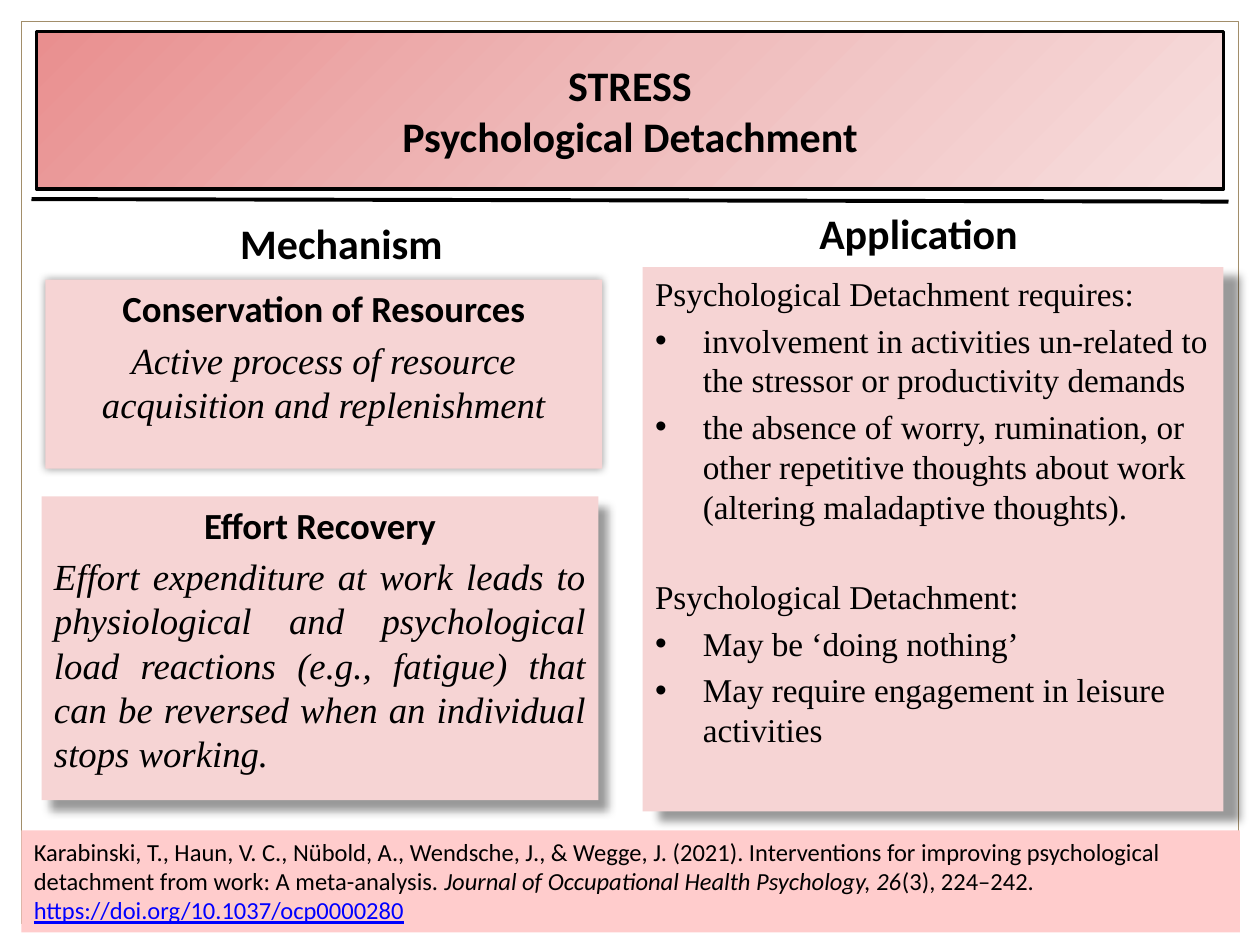
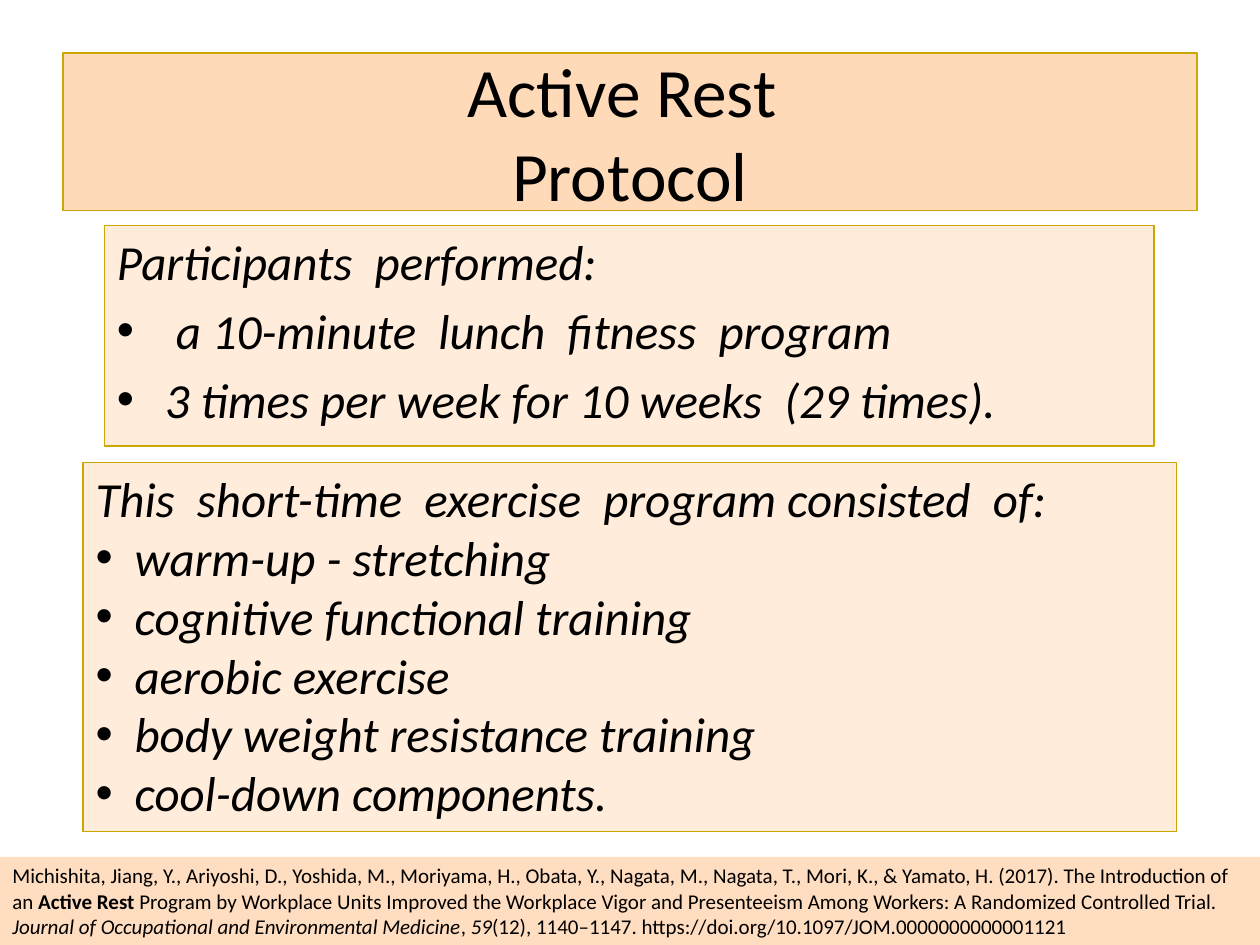
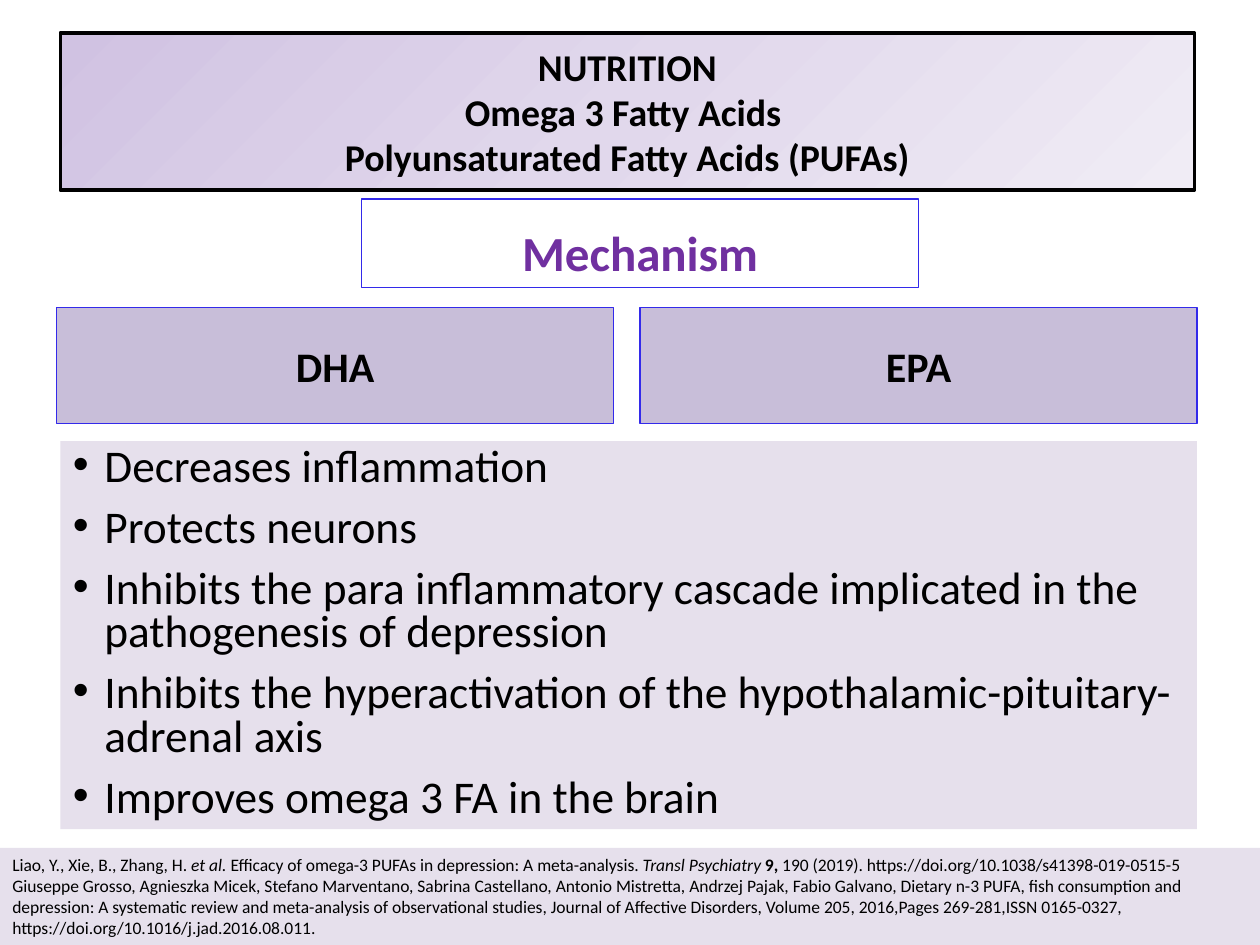
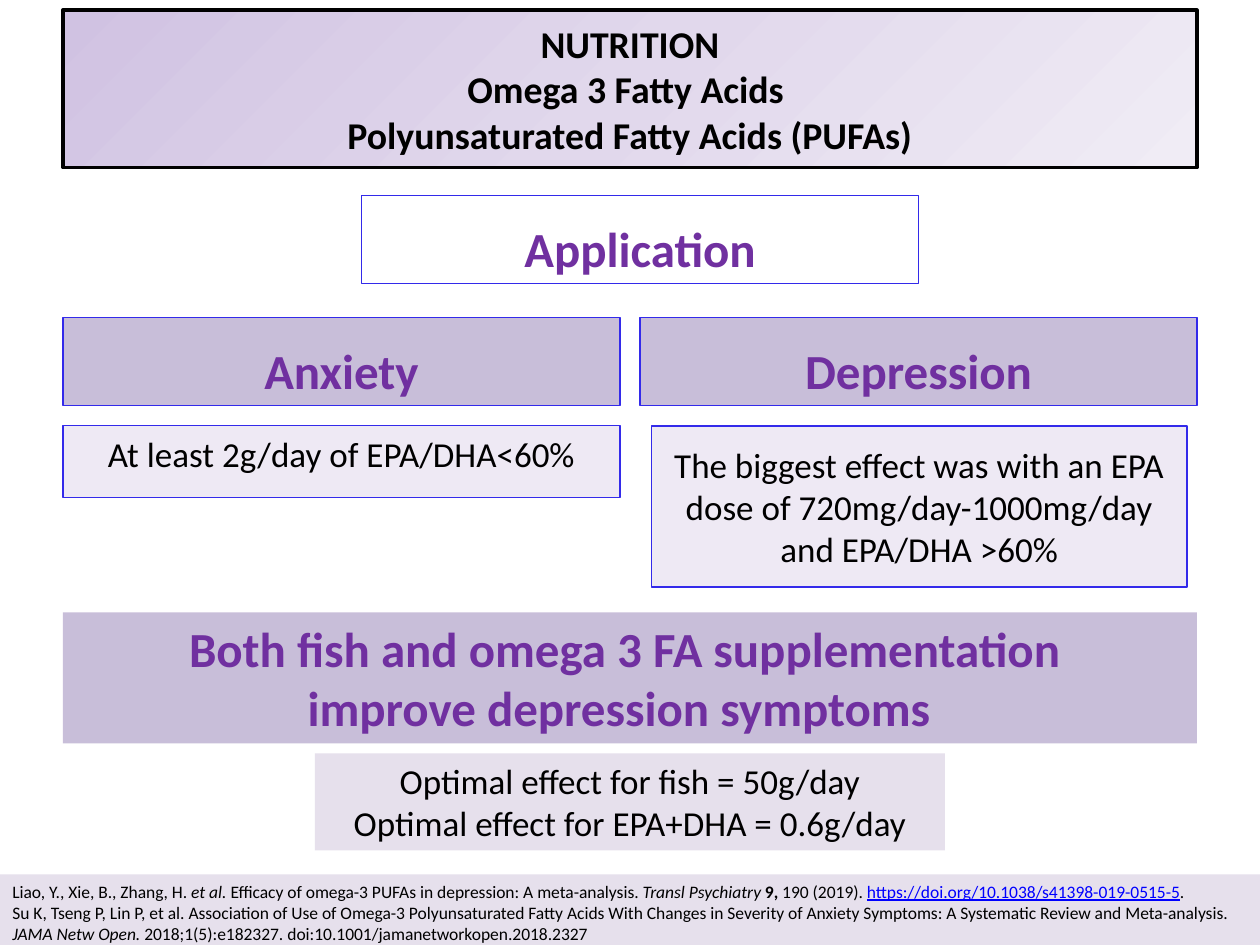
import pptx
import pptx.util
import pptx.dml.color
import pptx.enum.shapes
import pptx.enum.text
from lxml import etree

Inches, Pt = pptx.util.Inches, pptx.util.Pt
RGB = pptx.dml.color.RGBColor
ALIGN = pptx.enum.text.PP_ALIGN
ANCHOR = pptx.enum.text.MSO_ANCHOR
RECTANGLE = pptx.enum.shapes.MSO_SHAPE.RECTANGLE
qn = pptx.oxml.ns.qn

# Colours
BLACK = RGB(0x00, 0x00, 0x00)
LINK_BLUE = RGB(0x00, 0x00, 0xFF)
TAN = RGB(0xA2, 0x8E, 0x6A)
PINK = RGB(0xF6, 0xD4, 0xD4)
PINK_FOOTER = RGB(0xFF, 0xCC, 0xCC)
GOLD = RGB(0xCC, 0xA7, 0x00)
PEACH = RGB(0xFF, 0xDA, 0xB8)
PEACH_PALE = RGB(0xFF, 0xEC, 0xDB)
PEACH_FOOTER = RGB(0xFF, 0xDD, 0xC0)
INDIGO = RGB(0x33, 0x2A, 0xEA)
PURPLE = RGB(0x70, 0x30, 0xA0)
LAVENDER = RGB(0xC8, 0xBE, 0xD9)
LAVENDER_PALE = RGB(0xEE, 0xE9, 0xF4)
LAVENDER_GREY = RGB(0xE6, 0xE0, 0xEC)
RED_BLEND = ("E98F8F", "EFBCBC", "F7DEDE")
PURPLE_BLEND = ("D0C2E2", "E1D8EC", "F0ECF5")

# Box styles; each is laid over DEFAULTS
DEFAULTS = dict(fill=None, line=None, weight=0.75, size=20, color=BLACK, bold=False,
                italic=False, font="Calibri", align=ALIGN.LEFT, anchor=ANCHOR.TOP,
                before=0, spacing=None, bullet=None, shadow=None)
CENTRED = dict(align=ALIGN.CENTER, anchor=ANCHOR.MIDDLE)
BANNER = dict(CENTRED, line=BLACK, weight=2, bold=True)
PURPLE_HEAD = dict(line=INDIGO, size=28, bold=True, color=PURPLE,
                   align=ALIGN.CENTER, anchor=ANCHOR.BOTTOM)
PINK_CARD = dict(fill=PINK, size=21, before=4.2, align=ALIGN.CENTER)
REST_CARD = dict(fill=PEACH_PALE, line=GOLD, size=28, italic=True)
LAVENDER_TEXT = dict(fill=LAVENDER_PALE, line=INDIGO, align=ALIGN.CENTER)
STYLES = {
    "stress banner": dict(BANNER, fill=RED_BLEND, size=24),
    "nutrition banner": dict(BANNER, fill=PURPLE_BLEND, size=21.6),
    "frame": dict(line=TAN),
    "column head": dict(CENTRED, size=24, bold=True),
    "column head top": dict(size=24, bold=True, align=ALIGN.CENTER),
    "resources card": dict(PINK_CARD, shadow=(0, 0)),
    "recovery card": dict(PINK_CARD, shadow=(8, 50)),
    "application card": dict(fill=PINK, size=19, font="Times New Roman", before=3.8,
                             shadow=(11, 30)),
    "rest title": dict(CENTRED, fill=PEACH, line=GOLD, size=39.6),
    "rest spaced": dict(REST_CARD, before=5.6),
    "rest list": REST_CARD,
    "acid": dict(CENTRED, fill=LAVENDER, line=INDIGO, size=24, bold=True),
    "purple head": PURPLE_HEAD,
    "purple filled": dict(PURPLE_HEAD, fill=LAVENDER),
    "purple band": dict(PURPLE_HEAD, fill=LAVENDER, line=None, anchor=ANCHOR.TOP),
    "effects": dict(fill=LAVENDER_GREY, size=25.9, spacing=0.8, before=10, bullet=0.25),
    "dose": LAVENDER_TEXT,
    "dose middle": dict(LAVENDER_TEXT, anchor=ANCHOR.MIDDLE),
    "optimum": dict(fill=LAVENDER_GREY, align=ALIGN.CENTER),
    "pink footer": dict(fill=PINK_FOOTER, size=14),
    "peach footer": dict(fill=PEACH_FOOTER, size=12),
    "lavender footer": dict(fill=LAVENDER_GREY, size=10),
}

# Paragraph and run variations
BULLET = dict(bullet=0.38)
LIST_ITEM = dict(bullet=0.31)
HEAD = dict(bold=True)
QUOTE = dict(font="Times New Roman", italic=True)
JUSTIFIED = dict(QUOTE, align=ALIGN.JUSTIFY)
NEW_GROUP = dict(before=29)
ITALIC = dict(italic=True)
BOLD = dict(bold=True)
LINK = dict(color=LINK_BLUE, underline=True)

# Content: a paragraph is text, a list of (text, run format), or (either, paragraph format)
NUTRITION = ["NUTRITION\nOmega 3 Fatty Acids \nPolyunsaturated Fatty Acids (PUFAs)"]
LIAO = [
    ("Liao, Y., Xie, B., Zhang, H. ", {}), ("et al.", ITALIC),
    (" Efficacy of omega-3 PUFAs in depression: A meta-analysis. ", {}),
    ("Transl Psychiatry ", ITALIC), ("9, ", BOLD), ("190 (2019). ", {}),
]
LIAO_DOI = "https://doi.org/10.1038/s41398-019-0515-5"
LEFT, RIGHT, COLUMN = 0.5, 5.08, 4.42

STRESS = [
    ("frame", (0.17, 0.17, 9.66, 7.16), []),
    ("stress banner", (0.29, 0.25, 9.42, 1.25), ["STRESS", "Psychological Detachment"]),
    ("column head top", (LEFT, 1.68, COLUMN, 0.49), ["Mechanism"]),
    ("recovery card", (0.33, 3.94, COLUMN, 2.41), [
        ("Effort Recovery", HEAD),
        ("Effort expenditure at work leads to physiological and psychological load "
         "reactions (e.g., fatigue) that can be reversed when an individual stops "
         "working.", JUSTIFIED)]),
    ("column head", (RIGHT, 1.5, COLUMN, 0.7), ["Application"]),
    ("application card", (5.1, 2.12, 4.61, 4.32), [
        "Psychological Detachment requires:",
        ("involvement in activities un-related to the stressor or productivity demands",
         BULLET),
        ("the absence of worry, rumination, or other repetitive thoughts about work "
         "(altering maladaptive thoughts).", BULLET),
        ("Psychological Detachment:", NEW_GROUP),
        ("May be ‘doing nothing’", BULLET),
        ("May require engagement in leisure activities", BULLET)]),
    ("resources card", (0.36, 2.22, COLUMN, 1.5), [
        ("Conservation of Resources", HEAD),
        ("Active process of resource acquisition and replenishment", QUOTE)]),
    ("pink footer", (0.17, 6.59, 9.67, 0.81), [[
        ("Karabinski, T., Haun, V. C., Nübold, A., Wendsche, J., & Wegge, J. (2021). "
         "Interventions for improving psychological detachment from work: "
         "A meta-analysis. ", {}),
        ("Journal of Occupational Health Psychology, 26", ITALIC),
        ("(3), 224–242. ", {}),
        ("https://doi.org/10.1037/ocp0000280", LINK)]]),
]

ACTIVE_REST = [
    ("rest title", (0.5, 0.42, 9, 1.25), ["Active Rest \nProtocol"]),
    ("rest spaced", (0.83, 1.79, 8.33, 1.75), [
        "Participants  performed:",
        (" a 10-minute  lunch  fitness  program", BULLET),
        ("3 times per week for 10 weeks  (29 times).", BULLET)]),
    ("rest list", (0.66, 3.67, 8.68, 2.93), [
        "This  short-time  exercise  program consisted  of:",
        ("warm-up - stretching", LIST_ITEM),
        ("cognitive functional training", LIST_ITEM),
        ("aerobic exercise", LIST_ITEM),
        ("body weight resistance training", LIST_ITEM),
        ("cool-down components.", LIST_ITEM)]),
    ("peach footer", (0, 6.8, 10, 0.7), [[
        ("Michishita, Jiang, Y., Ariyoshi, D., Yoshida, M., Moriyama, H., Obata, Y., "
         "Nagata, M., Nagata, T., Mori, K., & Yamato, H. (2017). The Introduction of an ",
         {}),
        ("Active Rest", BOLD),
        (" Program by Workplace Units Improved the Workplace Vigor and Presenteeism "
         "Among Workers: A Randomized Controlled Trial. ", {}),
        ("Journal of Occupational and Environmental Medicine", ITALIC),
        (", ", {}), ("59", ITALIC),
        ("(12), 1140–1147. https://doi.org/10.1097/JOM.0000000000001121", {})]]),
]

OMEGA_MECHANISM = [
    ("acid", (0.45, 2.44, COLUMN, 0.92), ["DHA"]),
    ("acid", (RIGHT, 2.44, COLUMN, 0.92), ["EPA"]),
    ("nutrition banner", (0.48, 0.26, 9, 1.25), NUTRITION),
    ("purple head", (2.87, 1.58, COLUMN, 0.7), ["Mechanism"]),
    ("effects", (0.48, 3.5, 9.02, 3.08), [
        "Decreases inflammation",
        "Protects neurons",
        "Inhibits the para inflammatory cascade implicated in the pathogenesis of "
        "depression",
        "Inhibits the hyperactivation of the hypothalamic-pituitary-adrenal axis",
        "Improves omega 3 FA in the brain"]),
    ("lavender footer", (0, 6.73, 10, 0.77), [
        LIAO + [(LIAO_DOI, {})],
        "Giuseppe Grosso, Agnieszka Micek, Stefano Marventano, Sabrina Castellano, "
        "Antonio Mistretta, Andrzej Pajak, Fabio Galvano, Dietary n-3 PUFA, fish "
        "consumption and depression: A systematic review and meta-analysis of "
        "observational studies, Journal of Affective Disorders, Volume 205, "
        "2016,Pages 269-281,ISSN 0165-0327, "
        "https://doi.org/10.1016/j.jad.2016.08.011."]),
]

OMEGA_APPLICATION = [
    ("purple filled", (LEFT, 2.52, COLUMN, 0.7), ["Anxiety"]),
    ("dose", (LEFT, 3.38, COLUMN, 0.57), ["At least 2g/day of EPA/DHA<60%"]),
    ("purple filled", (RIGHT, 2.52, COLUMN, 0.7), ["Depression"]),
    ("dose middle", (5.17, 3.38, 4.25, 1.28), [
        "The biggest effect was with an EPA dose of 720mg/day-1000mg/day and "
        "EPA/DHA >60%"]),
    ("nutrition banner", (0.5, 0.08, 9, 1.25), NUTRITION),
    ("purple head", (2.87, 1.55, COLUMN, 0.7), ["Application"]),
    ("purple band", (0.5, 4.86, 9, 1.04), [
        "Both fish and omega 3 FA supplementation ",
        "improve depression symptoms  "]),
    ("optimum", (2.5, 5.98, 5, 0.77), [
        "Optimal effect for fish = 50g/day",
        "Optimal effect for EPA+DHA = 0.6g/day"]),
    ("lavender footer", (0, 6.94, 10, 0.61), [
        LIAO + [(LIAO_DOI, LINK), (".", {})],
        [("Su K, Tseng P, Lin P, et al. Association of Use of Omega-3 Polyunsaturated "
          "Fatty Acids With Changes in Severity of Anxiety Symptoms: A Systematic "
          "Review and Meta-analysis. ", {}),
         ("JAMA Netw Open.", ITALIC),
         (" 2018;1(5):e182327. doi:10.1001/jamanetworkopen.2018.2327", {})]]),
]


def add_node(parent, tag, **values):
    return etree.SubElement(parent, qn(tag), {key: str(val) for key, val in values.items()})


def paint_blend(box, colours):
    """Three-stop gradient that spreads from the top left corner."""
    box.fill.gradient()
    blend = box._element.spPr.find(qn("a:gradFill"))
    for child in list(blend):
        blend.remove(child)
    stops = add_node(blend, "a:gsLst")
    for index, colour in enumerate(colours):
        add_node(add_node(stops, "a:gs", pos=index * 50000), "a:srgbClr", val=colour)
    centre = add_node(blend, "a:path", path="circle")
    add_node(centre, "a:fillToRect", r=100000, b=100000)


def cast_shadow(box, distance, angle):
    effects = box._element.spPr.find(qn("a:effectLst"))
    shadow = add_node(effects, "a:outerShdw", blurRad=Pt(5), dist=Pt(distance),
                      dir=angle * 60000, algn="tl", rotWithShape=0)
    add_node(add_node(shadow, "a:srgbClr", val="000000"), "a:alpha", val=40000)


def write_runs(para, content, look):
    runs = [(content, {})] if isinstance(content, str) else content
    for text, change in runs:
        values = {**look, **change}
        formats = dict(name=values["font"], size=Pt(values["size"]), bold=values["bold"],
                       italic=values["italic"], underline=values.get("underline"))
        for index, piece in enumerate(text.split("\n")):
            if index:
                para.add_line_break()
            span = para.add_run()
            span.text = piece
            for key, value in formats.items():
                setattr(span.font, key, value)
            span.font.color.rgb = values["color"]


def write_paragraphs(frame, paragraphs, style):
    for index, item in enumerate(paragraphs):
        content, change = item if isinstance(item, tuple) else (item, {})
        look = {**style, **change}
        para = frame.paragraphs[0] if index == 0 else frame.add_paragraph()
        if look["bullet"]:
            props = para._p.get_or_add_pPr()
            props.set("marL", str(Inches(look["bullet"])))
            props.set("indent", str(-Inches(look["bullet"])))
            add_node(props, "a:buFont", typeface="Arial")
            add_node(props, "a:buChar", char="•")
        formats = dict(alignment=look["align"], line_spacing=look["spacing"],
                       space_before=Pt(look["before"] if index else 0))
        for key, value in formats.items():
            setattr(para, key, value)
        write_runs(para, content, look)


def add_box(page, style_name, place, paragraphs):
    style = {**DEFAULTS, **STYLES[style_name]}
    place = [Inches(length) for length in place]
    if style["fill"] or style["line"]:
        box = page.shapes.add_shape(RECTANGLE, *place)
        box.shadow.inherit = False
    else:
        box = page.shapes.add_textbox(*place)
    # Fill, outline and shadow
    if style["fill"] is None:
        box.fill.background()
    elif style["fill"] in (RED_BLEND, PURPLE_BLEND):
        paint_blend(box, style["fill"])
    else:
        box.fill.solid()
        box.fill.fore_color.rgb = style["fill"]
    if style["line"] is None:
        box.line.fill.background()
    else:
        box.line.color.rgb = style["line"]
        box.line.width = Pt(style["weight"])
    if style["shadow"]:
        cast_shadow(box, *style["shadow"])
    # Text
    box.text_frame.word_wrap = True
    box.text_frame.vertical_anchor = style["anchor"]
    write_paragraphs(box.text_frame, paragraphs, style)


def add_rule(page, start, end):
    rule = page.shapes.add_connector(pptx.enum.shapes.MSO_CONNECTOR.STRAIGHT,
                                     *(Inches(length) for length in start + end))
    rule.line.color.rgb = BLACK
    rule.line.width = Pt(2.25)
    add_node(rule._element.spPr, "a:effectLst")


def main():
    deck = pptx.Presentation()
    deck.slide_width, deck.slide_height = Inches(10), Inches(7.5)
    for boxes in (STRESS, ACTIVE_REST, OMEGA_MECHANISM, OMEGA_APPLICATION):
        page = deck.slides.add_slide(deck.slide_layouts[6])
        for box in boxes:
            add_box(page, *box)
        if boxes is STRESS:
            add_rule(page, (0.25, 1.58), (9.75, 1.6))
    deck.save("out.pptx")


if __name__ == "__main__":
    main()
